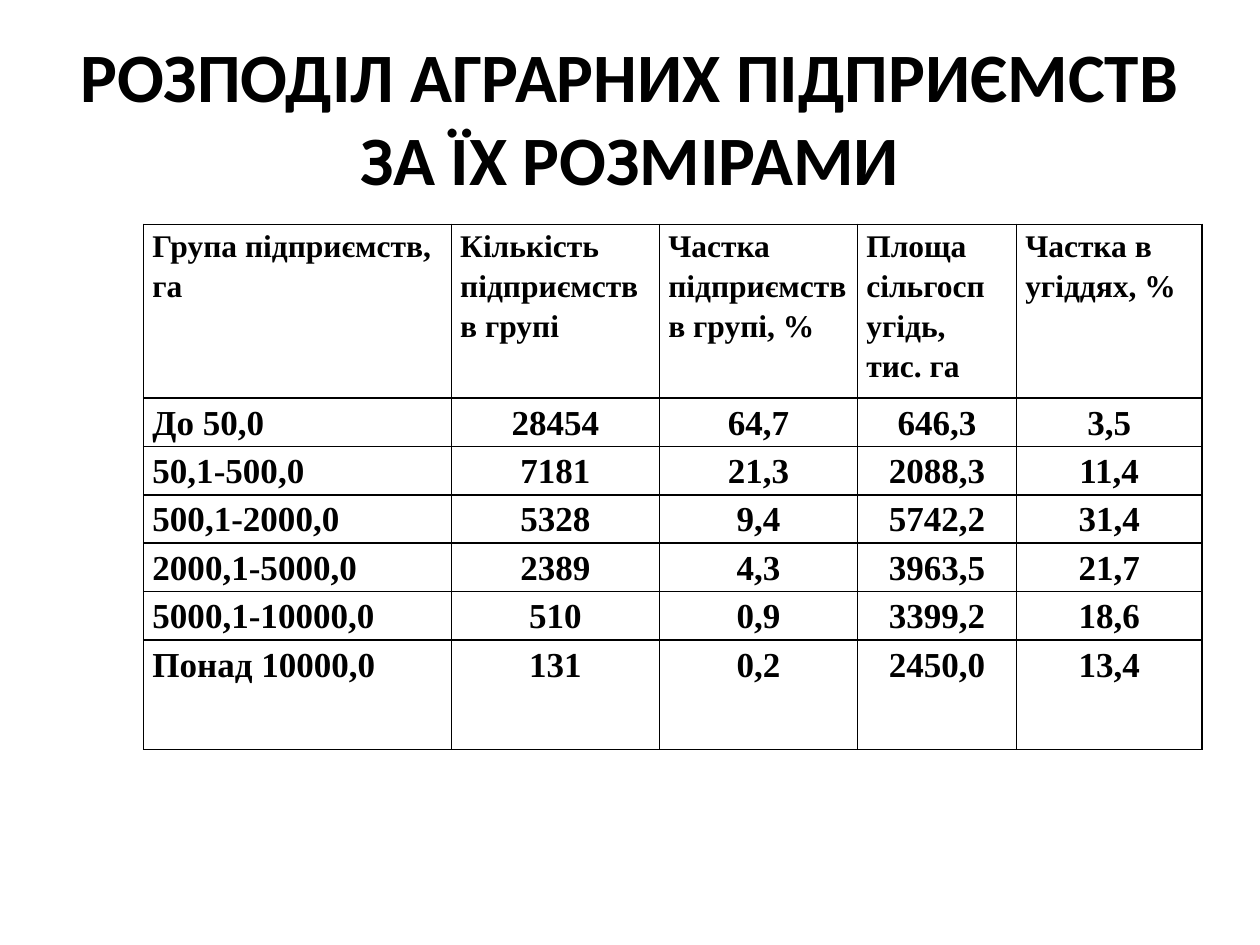
import dataclasses

import pptx
import pptx.dml.color
import pptx.enum.text
import pptx.oxml
import pptx.oxml.ns
import pptx.util
from pptx.util import Inches

ALIGN = pptx.enum.text.PP_ALIGN
ANCHOR = pptx.enum.text.MSO_ANCHOR


@dataclasses.dataclass(frozen=True)
class Theme:
    ink: str = "000000"
    title_font: str = "Calibri"
    table_font: str = "Times New Roman"
    title_size: float = 39.6
    header_size: float = 18
    body_size: float = 20
    border_width: float = 1


THEME = Theme()

TITLE = "РОЗПОДІЛ АГРАРНИХ ПІДПРИЄМСТВ ЗА ЇХ РОЗМІРАМИ"
ROWS = [
    ["Група підприємств, га", "Кількість підприємств в групі",
     "Частка підприємств в групі, %", "Площа сільгосп угідь, тис. га",
     "Частка в угіддях, %"],
    ["До 50,0", "28454", "64,7", "646,3", "3,5"],
    ["50,1-500,0", "7181", "21,3", "2088,3", "11,4"],
    ["500,1-2000,0", "5328", "9,4", "5742,2", "31,4"],
    ["2000,1-5000,0", "2389", "4,3", "3963,5", "21,7"],
    ["5000,1-10000,0", "510", "0,9", "3399,2", "18,6"],
    ["Понад 10000,0", "131", "0,2", "2450,0", "13,4"],
]
COLUMN_WIDTHS = [2.44, 1.65, 1.57, 1.26, 1.47]
HEADER_HEIGHT, BODY_HEIGHT, LAST_HEIGHT = 1.27, 0.35, 0.87


def write_text(frame, text, *, font, size, align=ALIGN.LEFT, spacing=1.0):
    """Fill a text frame with one bold paragraph."""
    frame.word_wrap = True
    paragraph = frame.paragraphs[0]
    paragraph.alignment = align
    paragraph.line_spacing = spacing
    run = paragraph.add_run()
    run.text = text
    run.font.name = font
    run.font.size = pptx.util.Pt(size)
    run.font.bold = True
    run.font.color.rgb = pptx.dml.color.RGBColor.from_string(THEME.ink)


def style_cell(cell):
    """Set narrow margins, no fill and a thin border on every side."""
    cell.margin_left = cell.margin_right = Inches(0.07)
    cell.margin_top = cell.margin_bottom = 0
    cell.vertical_anchor = ANCHOR.TOP
    cell.fill.background()
    properties = cell._tc.get_or_add_tcPr()
    for index, side in enumerate(("lnL", "lnR", "lnT", "lnB")):
        border = pptx.oxml.parse_xml(
            f'<a:{side} {pptx.oxml.ns.nsdecls("a")} '
            f'w="{pptx.util.Pt(THEME.border_width)}"><a:solidFill>'
            f'<a:srgbClr val="{THEME.ink}"/></a:solidFill></a:{side}>')
        properties.insert(index, border)


def add_title(slide, left, top, width, height):
    shape = slide.shapes.add_textbox(left, top, width, height)
    shape.text_frame.vertical_anchor = ANCHOR.MIDDLE
    write_text(shape.text_frame, TITLE, font=THEME.title_font,
               size=THEME.title_size, align=ALIGN.CENTER)


def add_distribution_table(slide, left, top, width, height):
    table = slide.shapes.add_table(
        len(ROWS), len(COLUMN_WIDTHS), left, top, width, height).table
    table.horz_banding = False

    # Column widths share the box; row heights follow their role
    for column, share in zip(table.columns, COLUMN_WIDTHS):
        column.width = int(width * share / sum(COLUMN_WIDTHS))
    body_count = len(ROWS) - 2
    heights = [HEADER_HEIGHT, *[BODY_HEIGHT] * body_count, LAST_HEIGHT]
    for row, row_height in zip(table.rows, heights):
        row.height = Inches(row_height)

    # Header and group names align left, figures are centred
    for row_index, values in enumerate(ROWS):
        for column_index, value in enumerate(values):
            cell = table.cell(row_index, column_index)
            style_cell(cell)
            is_figure = row_index > 0 and column_index > 0
            write_text(
                cell.text_frame, value, font=THEME.table_font,
                size=THEME.body_size if row_index else THEME.header_size,
                align=ALIGN.CENTER if is_figure else ALIGN.LEFT,
                spacing=1.15)


def main():
    presentation = pptx.Presentation()
    presentation.slide_width = Inches(10)
    presentation.slide_height = Inches(7.5)
    slide = presentation.slides.add_slide(presentation.slide_layouts[6])
    add_title(slide, Inches(0.5), Inches(0.3), Inches(9), Inches(1.25))
    add_distribution_table(
        slide, Inches(1.14), Inches(1.78), Inches(8.4), Inches(3.89))
    presentation.save("out.pptx")


if __name__ == "__main__":
    main()
